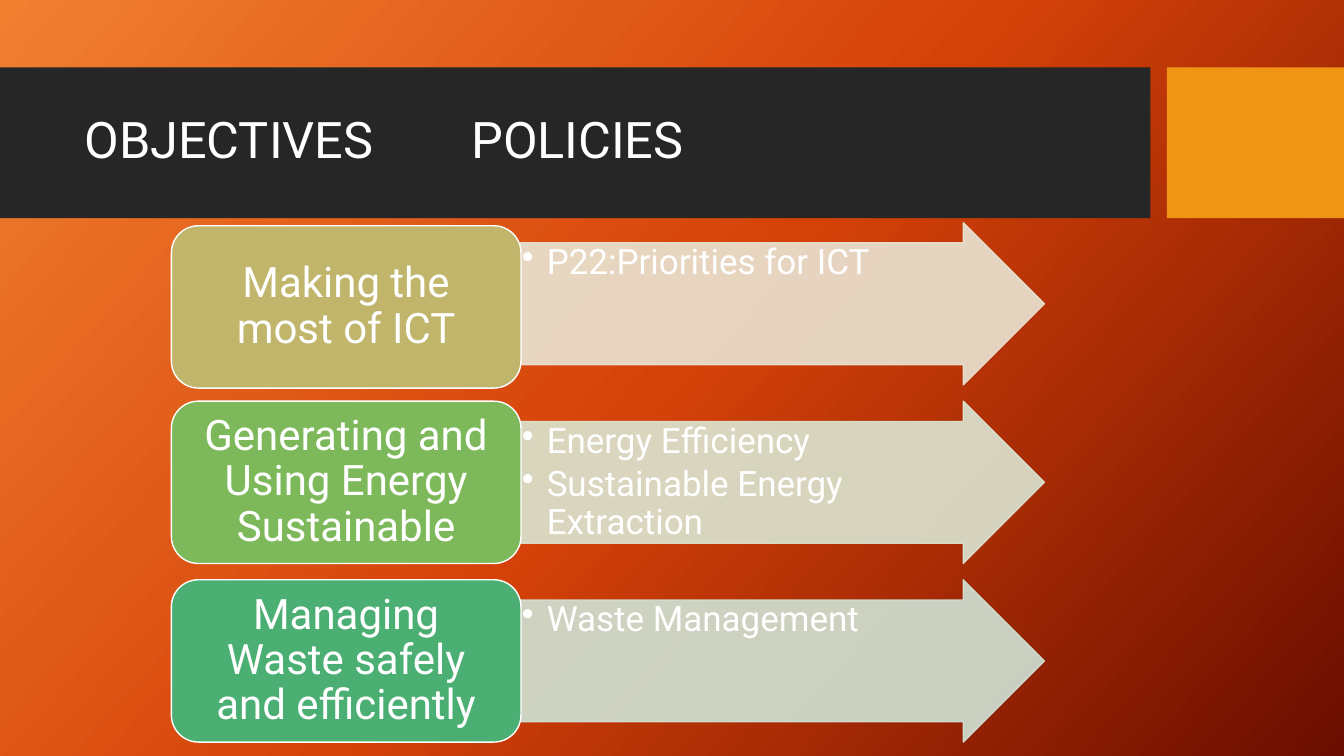
from copy import deepcopy
from lxml.etree import SubElement
from pptx import Presentation
from pptx.dml.color import RGBColor
from pptx.enum.shapes import MSO_SHAPE
from pptx.enum.text import MSO_ANCHOR, PP_ALIGN
from pptx.oxml.ns import qn
from pptx.util import Cm, Pt

FONT = "Roboto"
WHITE = "FFFFFF"
ROWS = [
    ("Making the most of ICT", "C1B56B", "E9E5D4",
     ["P22:Priorities for ICT"], 0.08),
    ("Generating and Using Energy Sustainable", "7DB95A", "DBE6D2",
     ["Energy Efficiency", "Sustainable Energy Extraction"], 0),
    ("Managing Waste safely and efficiently", "4BAF73", "D0E3D5",
     ["Waste Management"], 0),
]


def color(code):
    return RGBColor.from_string(code)


def backdrop(slide, stops, angle):
    fill = slide.background.fill
    fill.gradient()
    first = slide.background._cSld.find(".//" + qn("a:gs"))
    first.addnext(deepcopy(first))
    for stop, (place, code) in zip(fill.gradient_stops, stops):
        stop.position = place
        stop.color.rgb = color(code)
    fill.gradient_angle = 360 - angle  # counted anticlockwise


def block(slide, kind, box, fill, line=None, alpha=None):
    shape = slide.shapes.add_shape(kind, *map(Cm, box))
    shape.shadow.inherit = False
    shape.fill.solid()
    shape.fill.fore_color.rgb = color(fill)
    if line:
        shape.line.color.rgb = color(line)
        shape.line.width = Pt(1)
    else:
        shape.line.fill.background()
    if alpha:
        for tint in shape._element.spPr.iter(qn("a:srgbClr")):
            SubElement(tint, qn("a:alpha"), val=str(alpha * 1000))
    return shape


def write(shape, lines, size, align=PP_ALIGN.LEFT, anchor=MSO_ANCHOR.MIDDLE,
          inset=(0.25, 0.13, 0.25, 0.13), bullet=None, tab=None, after=0):
    frame = shape.text_frame
    frame.word_wrap = True
    frame.vertical_anchor = anchor
    (frame.margin_left, frame.margin_top,
     frame.margin_right, frame.margin_bottom) = map(Cm, inset)
    for i, line in enumerate(lines):
        para = frame.paragraphs[0] if i == 0 else frame.add_paragraph()
        para.alignment = align
        para.line_spacing = 0.9
        para.space_after = Pt(after)
        props = para._p.get_or_add_pPr()
        if bullet:
            props.set("marL", str(Cm(0.63)))
            props.set("indent", str(Cm(-0.63)))
            SubElement(props, qn("a:buChar"), char=bullet)
        if tab:
            tabs = SubElement(props, qn("a:tabLst"))
            SubElement(tabs, qn("a:tab"), pos=str(Cm(tab)), algn="l")
        run = para.add_run()
        run.text = line
        run.font.name = FONT
        run.font.size = Pt(size)
        run.font.color.rgb = color(WHITE)


def arrow(slide, top, tint, items):
    shape = block(slide, MSO_SHAPE.RIGHT_ARROW, (13.11, top, 13.21, 4.09),
                  tint, line=tint, alpha=90)
    shape.adjustments[0] = 0.75
    shape.adjustments[1] = 0.5
    write(shape, items, 25, anchor=MSO_ANCHOR.TOP, bullet="•", after=3.75,
          inset=(0.04, 0.04, 1.06, 0.04))


def label(slide, top, fill, text):
    shape = block(slide, MSO_SHAPE.ROUNDED_RECTANGLE, (4.32, top, 8.81, 4.09),
                  fill, line=WHITE)
    write(shape, [text], 30, align=PP_ALIGN.CENTER,
          inset=(0.3, 0.15, 0.3, 0.15))


def main():
    deck = Presentation()
    deck.slide_width, deck.slide_height = Cm(33.87), Cm(19.05)
    slide = deck.slides.add_slide(deck.slide_layouts[6])
    backdrop(slide, [(0, "F18031"), (0.5, "D54209"), (1, "6A0D00")], 42)

    # Title band
    block(slide, MSO_SHAPE.RECTANGLE, (0, 1.7, 28.99, 3.8), "262626")
    block(slide, MSO_SHAPE.RECTANGLE, (29.41, 1.7, 4.46, 3.8), "F09415")
    title = slide.shapes.add_textbox(Cm(1.88), Cm(2.08), Cm(26.7), Cm(3))
    write(title, ["OBJECTIVES\tPOLICIES"], 36, tab=9.75)

    # One row for each objective and its policies
    for i, (text, fill, tint, items, drop) in enumerate(ROWS):
        top = 5.61 + 4.5 * i
        arrow(slide, top, tint, items)
        label(slide, top + drop, fill, text)

    deck.save("out.pptx")


if __name__ == "__main__":
    main()
